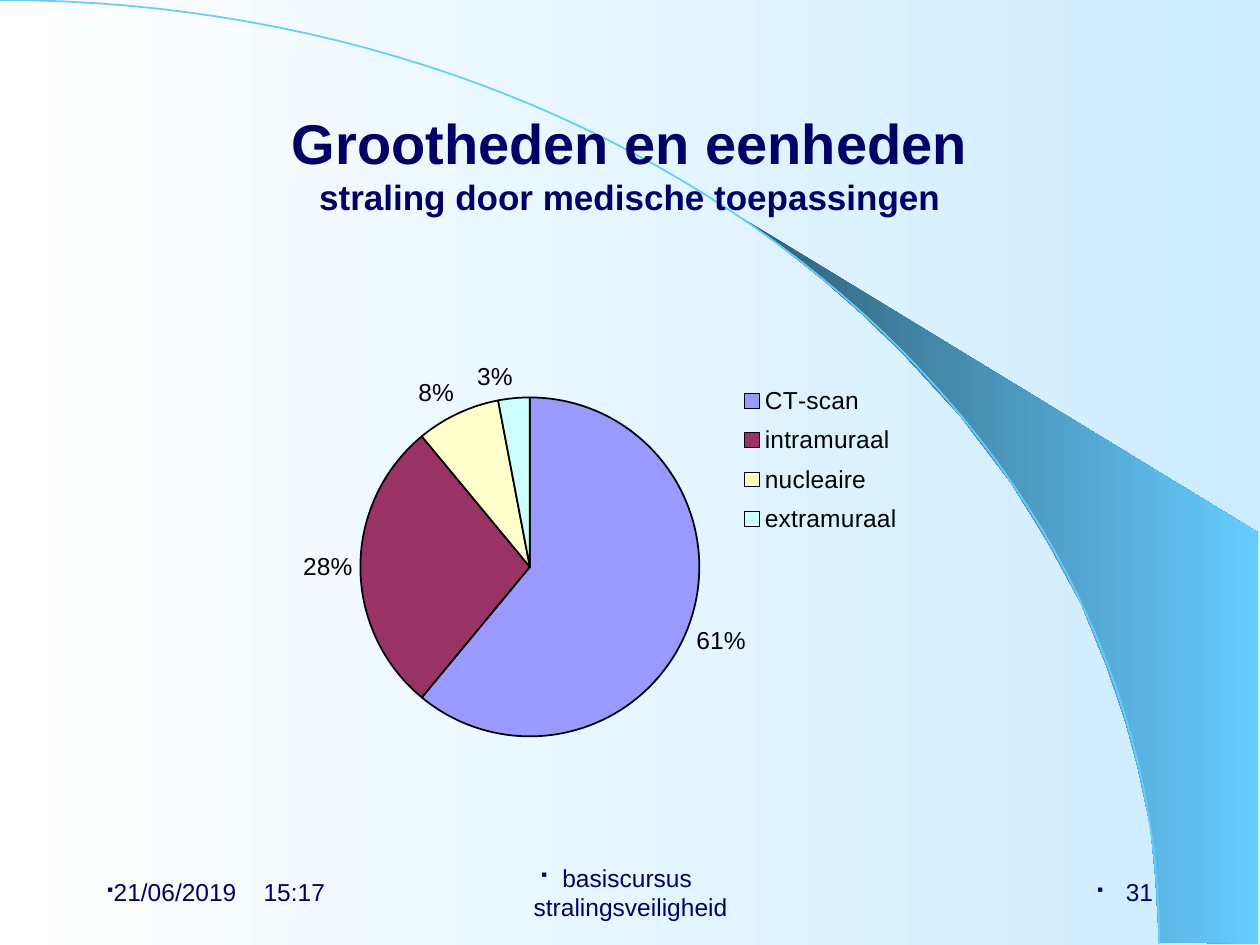
import pptx
import pptx.chart.data
import pptx.dml.color
import pptx.enum.chart
import pptx.enum.text
import pptx.oxml
import pptx.oxml.ns
import pptx.util

Inches = pptx.util.Inches
Pt = pptx.util.Pt
ALIGN = pptx.enum.text.PP_ALIGN
FONT = "Arial"
NAVY = "000066"
SKY = "66CCFF"
BLACK = "000000"

SWOOSH = [
    (9.2, 7.48), (9.99, 7.49), (9.99, 4.23), (5.89, 1.73), (6.24, 1.99),
    (6.53, 2.22), (6.85, 2.5), (7.16, 2.8), (7.62, 3.3), (8.03, 3.84),
    (8.32, 4.31), (8.58, 4.79), (8.78, 5.28), (8.93, 5.72), (9.03, 6.09),
    (9.13, 6.56), (9.17, 6.96),
]
SHARES = [
    ("CT-scan", 61, "9999FF"),
    ("intramuraal", 28, "993366"),
    ("nucleaire", 8, "FFFFCC"),
    ("extramuraal", 3, "CCFFFF"),
]


def rgb(value):
    return pptx.dml.color.RGBColor.from_string(value)


def set_gradient(fill, start, end):
    fill.gradient()
    fill.gradient_angle = 0
    for stop, color in zip(fill.gradient_stops, (start, end)):
        stop.color.rgb = rgb(color)


def set_font(font, size, color=BLACK, bold=False):
    font.name = FONT
    font.size = Pt(size)
    font.bold = bold
    font.color.rgb = rgb(color)


def add_outline(slide, points, close):
    points = [(Inches(x), Inches(y)) for x, y in points]
    builder = slide.shapes.build_freeform(*points[0])
    builder.add_line_segments(points[1:], close=close)
    sp = builder.convert_to_shape()
    sp.shadow.inherit = False
    return sp


def cubic_points(p0, p1, p2, p3, steps=60):
    def at(t, axis):
        u = 1 - t
        return (u ** 3 * p0[axis] + 3 * u * u * t * p1[axis]
                + 3 * u * t * t * p2[axis] + t ** 3 * p3[axis])
    return [(at(i / steps, 0), at(i / steps, 1)) for i in range(steps + 1)]


def add_decoration(slide):
    swoosh = add_outline(slide, SWOOSH, True)
    set_gradient(swoosh.fill, "2F5E76", SKY)
    swoosh.line.fill.background()
    arc = add_outline(slide, cubic_points((0, 0), (5.08, 0), (9.2, 3.35), (9.2, 7.49)), False)
    arc.fill.background()
    arc.line.color.rgb = rgb(SKY)
    arc.line.width = Pt(1)


def add_bullet(p, hanging):
    pPr = p._p.get_or_add_pPr()
    pPr.set("marL", str(Inches(hanging)))
    pPr.set("marR", str(Inches(hanging) if p.alignment == ALIGN.CENTER else 0))
    pPr.set("indent", str(-Inches(hanging)))
    ns = pptx.oxml.ns.nsdecls("a")
    for xml in (f'<a:buClr {ns}><a:srgbClr val="{NAVY}"/></a:buClr>',
                f'<a:buSzPct {ns} val="60000"/>',
                f'<a:buFont {ns} typeface="Wingdings" pitchFamily="2" charset="2"/>',
                f'<a:buChar {ns} char="§"/>'):
        pPr.append(pptx.oxml.parse_xml(xml))


def add_text(slide, text, left, top, width, height, sizes=(14,), bold=False,
             align=ALIGN.LEFT, hanging=None):
    sp = slide.shapes.add_textbox(*map(Inches, (left, top, width, height)))
    tf = sp.text_frame
    tf.word_wrap = True
    tf.vertical_anchor = pptx.enum.text.MSO_ANCHOR.MIDDLE
    p = tf.paragraphs[0]
    p.alignment = align
    for i, (line, size) in enumerate(zip(text.split("\n"), sizes)):
        if i:
            p.add_line_break()
        r = p.add_run()
        r.text = line
        set_font(r.font, size, NAVY, bold)
    if hanging is not None:
        add_bullet(p, hanging)


def set_layout(element, x, y, w, h, inner=False):
    for old in element.findall(pptx.oxml.ns.qn("c:layout")):
        element.remove(old)
    target = '<c:layoutTarget val="inner"/>' if inner else ""
    sizes = "".join(f'<c:{tag} val="{value}"/>' for tag, value in zip("xywh", (x, y, w, h)))
    layout = pptx.oxml.parse_xml(
        f'<c:layout {pptx.oxml.ns.nsdecls("c")}><c:manualLayout>{target}'
        f'<c:xMode val="edge"/><c:yMode val="edge"/>{sizes}</c:manualLayout></c:layout>')
    element.insert(0 if inner else 1, layout)


def add_pie(slide, left, top, width, height):
    data = pptx.chart.data.CategoryChartData()
    data.categories = [name for name, _, _ in SHARES]
    data.add_series("Series 1", [value for _, value, _ in SHARES])
    chart = slide.shapes.add_chart(
        pptx.enum.chart.XL_CHART_TYPE.PIE,
        *map(Inches, (left, top, width, height)), data).chart
    chart.has_title = False
    set_font(chart.font, 14)
    chart.has_legend = True
    legend = chart.legend
    legend.position = pptx.enum.chart.XL_LEGEND_POSITION.RIGHT
    legend.include_in_layout = False
    set_font(legend.font, 14)
    set_layout(legend._element, 0.62, 0.07, 0.31, 0.38)
    plot = chart.plots[0]
    plot.vary_by_categories = True
    set_layout(chart._chartSpace.chart.plotArea, 0.08, 0.12, 0.52, 0.76, inner=True)
    for i, (_, _, color) in enumerate(SHARES):
        fmt = plot.series[0].points[i].format
        fmt.fill.solid()
        fmt.fill.fore_color.rgb = rgb(color)
        fmt.line.color.rgb = rgb(BLACK)
        fmt.line.width = Pt(1)
    plot.has_data_labels = True
    labels = plot.data_labels
    labels.show_value = False
    labels.show_percentage = True
    labels.number_format = "0%"
    labels.number_format_is_linked = False
    labels.position = pptx.enum.chart.XL_LABEL_POSITION.OUTSIDE_END
    set_font(labels.font, 14)
    labels._element.find(".//" + pptx.oxml.ns.qn("a:bodyPr")).set("wrap", "none")


def main():
    prs = pptx.Presentation()
    prs.slide_width = Inches(10)
    prs.slide_height = Inches(7.5)
    slide = prs.slides.add_slide(prs.slide_layouts[6])
    set_gradient(slide.background.fill, "FFFFFF", "CCECFF")
    add_decoration(slide)
    for text, left, width, align, hanging in (
            ("21/06/2019    15:17", 0.75, 2.08, ALIGN.LEFT, 0),
            ("basiscursus  stralingsveiligheid", 3.42, 3.17, ALIGN.CENTER, 0.17),
            ("31", 7.17, 2.08, ALIGN.RIGHT, 0.23)):
        add_text(slide, text, left, 6.83, width, 0.5, align=align, hanging=hanging)
    add_text(slide, "Grootheden en eenheden\nstraling door medische toepassingen",
             0.75, 0.67, 8.5, 1.25, sizes=(32, 20), bold=True, align=ALIGN.CENTER)
    add_pie(slide, 2.4, 2.73, 5.31, 3.54)
    prs.save("out.pptx")


if __name__ == "__main__":
    main()
